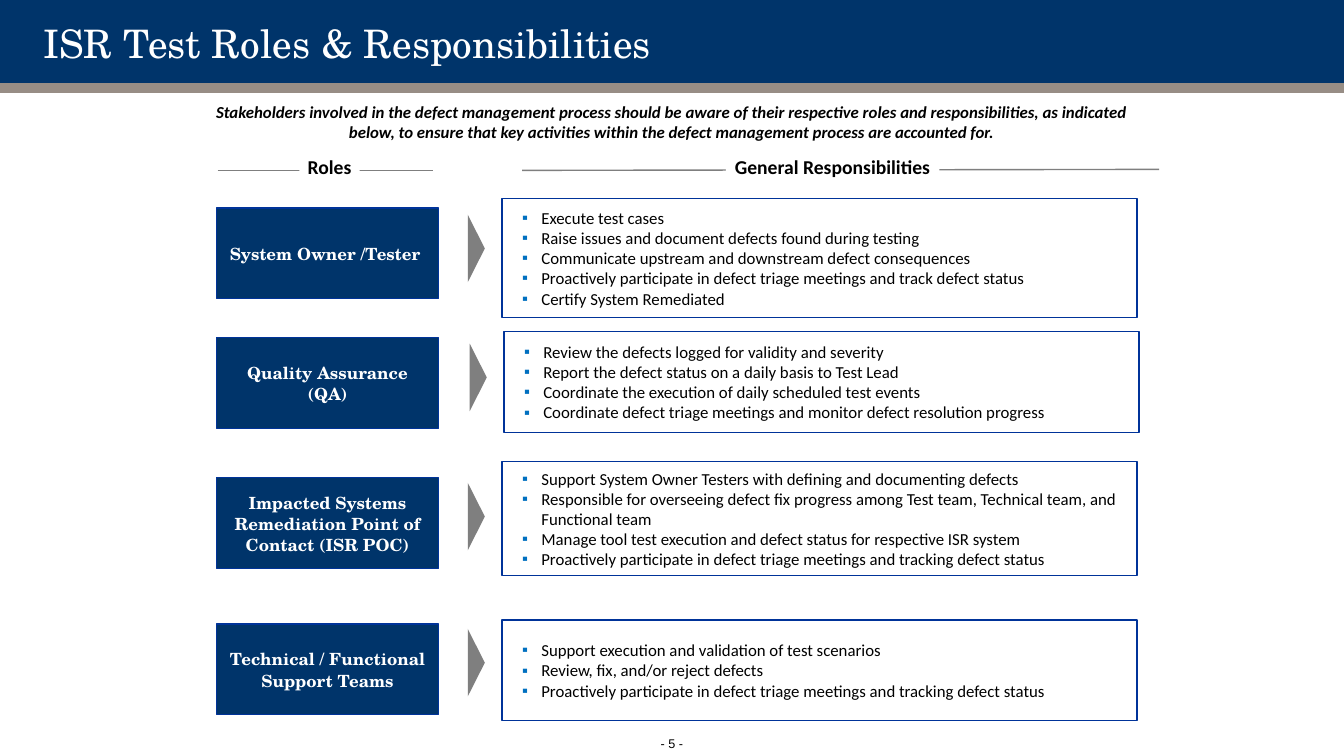
"""Build the slide on ISR test roles and responsibilities."""
from lxml import etree
from pptx import Presentation
from pptx.dml.color import RGBColor
from pptx.enum import shapes, text
from pptx.oxml import ns
from pptx.util import Pt

COLORS = {
    "navy": "00346A", "taupe": "978D85", "border": "003399", "gray": "7F7F7F",
    "bullet": "0070C0", "white": "FFFFFF", "black": "000000",
}
SERIF, SANS = "TeX Gyre Schola", "Calibri"
BOX_INSETS = (3.6, 3.6, 3.6, 3.6)
LIST_INSETS = (14.4, 3.6, 7.2, 3.6)
INDENT = 13.7

INTRO = (
    "Stakeholders involved in the defect management process should be aware of their "
    "respective roles and responsibilities, as indicated below, to ensure that key "
    "activities within the defect management process are accounted for."
)
TRACKING = "Proactively participate in defect triage meetings and tracking defect status"

ROWS = [
    ("System Owner /Tester ", 148.5, 171.4, 358.6, 141.8, 85, [
        "Execute test cases",
        "Raise issues and document defects found during testing",
        "Communicate upstream and downstream defect consequences",
        "Proactively participate in defect triage meetings and track defect status",
        "Certify System Remediated",
    ]),
    ("Quality Assurance\n(QA)", 241.2, 263.5, 360, 236.9, 72, [
        "Review the defects logged for validity and severity",
        "Report the defect status on a daily basis to Test Lead",
        "Coordinate the execution of daily scheduled test events",
        "Coordinate defect triage meetings and monitor defect resolution progress",
    ]),
    ("Impacted Systems Remediation Point of Contact (ISR POC)",
     341.3, 362.9, 358.6, 329.8, 81.4, [
        "Support System Owner Testers with defining and documenting defects",
        "Responsible for overseeing defect fix progress among Test team, "
        "Technical team, and Functional team",
        "Manage tool test execution and defect status for respective ISR system",
        TRACKING,
     ]),
    ("Technical / Functional Support Teams", 445.7, 467.3, 358.6, 442.8, 72, [
        "Support execution and validation of test scenarios",
        "Review, fix, and/or reject defects",
        TRACKING,
    ]),
]


def rgb(name):
    """Return the named colour."""
    return RGBColor.from_string(COLORS[name])


def write(shape, lines, size, font=SANS, color="black", bold=False, italic=False,
          align=text.PP_ALIGN.CENTER, anchor=text.MSO_ANCHOR.MIDDLE,
          insets=(0, 0, 0, 0), spacing=None, wrap=True):
    """Fill a shape with one paragraph per line in a single style."""
    frame = shape.text_frame
    frame.text = "\n".join(lines)
    frame.word_wrap = wrap
    frame.auto_size = text.MSO_AUTO_SIZE.NONE
    frame.vertical_anchor = anchor
    frame.margin_left, frame.margin_top, frame.margin_right, frame.margin_bottom = map(Pt, insets)
    for paragraph in frame.paragraphs:
        paragraph.alignment = align
        paragraph.line_spacing = spacing
        paragraph.font.name = font
        paragraph.font.size = Pt(size)
        paragraph.font.bold = bold
        paragraph.font.italic = italic
        paragraph.font.color.rgb = rgb(color)


def add_bullet(paragraph):
    """Give a paragraph a blue square bullet with a hanging indent."""
    properties = paragraph._p.get_or_add_pPr()
    properties.set("marL", str(Pt(INDENT)))
    properties.set("indent", str(-Pt(INDENT)))
    color = etree.SubElement(properties, ns.qn("a:buClr"))
    etree.SubElement(color, ns.qn("a:srgbClr"), val=COLORS["bullet"])
    etree.SubElement(properties, ns.qn("a:buFont"), typeface="Arial")
    etree.SubElement(properties, ns.qn("a:buChar"), char="▪")


def add_box(slide, left, top, width, height, fill=None, line=None,
            kind=shapes.MSO_SHAPE.RECTANGLE):
    """Add a flat preset shape with an optional fill and outline."""
    shape = slide.shapes.add_shape(kind, Pt(left), Pt(top), Pt(width), Pt(height))
    shape.shadow.inherit = False
    if fill:
        shape.fill.solid()
        shape.fill.fore_color.rgb = rgb(fill)
    else:
        shape.fill.background()
    if line:
        shape.line.color.rgb = rgb(line)
        shape.line.width = Pt(1)
    else:
        shape.line.fill.background()
    return shape


def add_textbox(slide, left, top, width, height):
    """Add an empty text box."""
    return slide.shapes.add_textbox(Pt(left), Pt(top), Pt(width), Pt(height))


def add_heading(slide, label, left, width, start, end, end_y):
    """Add a column heading that interrupts a thin rule."""
    rule = slide.shapes.add_connector(
        shapes.MSO_CONNECTOR.STRAIGHT, Pt(start), Pt(121.7), Pt(end), Pt(end_y))
    rule.line.color.rgb = rgb("gray")
    rule.line.width = Pt(1)
    etree.SubElement(rule._element.spPr, ns.qn("a:effectLst"))
    box = add_box(slide, left, 112.3, width, 15.8, fill="white")
    write(box, [label], 14, bold=True, anchor=text.MSO_ANCHOR.BOTTOM,
          insets=(5.8, 0, 5.8, 0), spacing=0.95, wrap=False)


def add_header(slide):
    """Add the title band and place the title on it."""
    add_box(slide, 0, 0, 960, 59.5, "navy", "navy")
    add_box(slide, 0, 59.5, 960, 6.6, "taupe", "taupe")
    title = slide.shapes.title
    title.left, title.top, title.width, title.height = map(Pt, (31, 11.5, 657.4, 36))
    write(title, ["ISR Test Roles & Responsibilities"], 28, SERIF, "white",
          align=text.PP_ALIGN.LEFT, anchor=text.MSO_ANCHOR.BOTTOM, spacing=1.06)
    title.element.getparent().append(title.element)


def add_row(slide, role, role_top, arrow_top, list_left, list_top, list_height, duties):
    """Add a role, its arrow and its list of responsibilities."""
    role_box = add_box(slide, 154.8, role_top, 158.4, 64.8, "navy", "border")
    write(role_box, role.split("\n"), 12, SERIF, "white", bold=True,
          insets=BOX_INSETS, spacing=1.06)
    arrow = add_box(slide, list_left - 42.5, arrow_top, 48.2, 12.2, "gray",
                    kind=shapes.MSO_SHAPE.ISOSCELES_TRIANGLE)
    arrow.rotation = 90
    duty_box = add_box(slide, list_left, list_top, 453.6, list_height, line="border")
    write(duty_box, duties, 12, align=text.PP_ALIGN.LEFT, insets=LIST_INSETS)
    for paragraph in duty_box.text_frame.paragraphs:
        add_bullet(paragraph)


def main():
    """Create and save the presentation."""
    presentation = Presentation()
    presentation.slide_width, presentation.slide_height = Pt(960), Pt(540)
    slide = presentation.slides.add_slide(presentation.slide_layouts[5])
    add_header(slide)
    write(add_textbox(slide, 151.9, 72.7, 655.9, 31), [INTRO], 12, bold=True, italic=True,
          anchor=text.MSO_ANCHOR.TOP)
    add_heading(slide, "General Responsibilities", 518.4, 152.6, 373, 828, 121)
    add_heading(slide, "Roles", 213.8, 43.2, 155.5, 309.6, 121.7)
    for row in ROWS:
        add_row(slide, *row)
    write(add_textbox(slide, 468.7, 524.9, 22.3, 11.5), ["- 5 -"], 9, "Arial",
          anchor=text.MSO_ANCHOR.BOTTOM, spacing=1.06, wrap=False)
    presentation.save("out.pptx")


if __name__ == "__main__":
    main()
